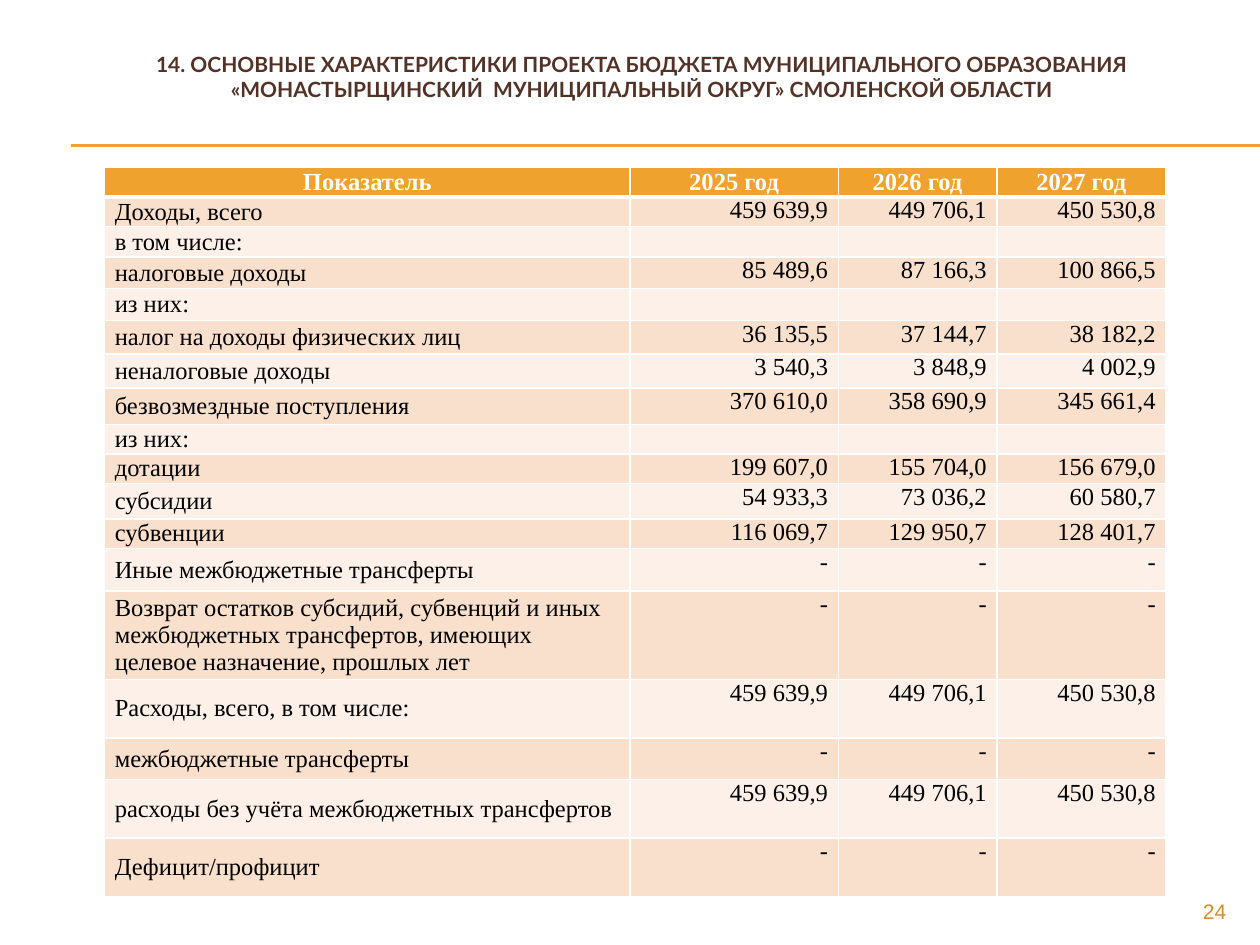
from lxml.etree import SubElement
from pptx import Presentation
from pptx.dml.color import RGBColor
from pptx.enum.shapes import MSO_CONNECTOR as Connector
from pptx.enum.text import MSO_ANCHOR as Anchor, PP_ALIGN as Align
from pptx.oxml.ns import qn
from pptx.util import Pt

COLORS = {
    "accent": "F0A22E",
    "title": "523227",
    "number": "D38E27",
    "band_dark": "F9E0CD",
    "band_light": "FCF0E8",
    "text": "000000",
    "white": "FFFFFF",
}

HEADER = ("Показатель", "2025 год", "2026 год", "2027 год")
NO_VALUES = ("", "", "")
DASHES = ("-", "-", "-")
TOTALS = ("459 639,9", "449 706,1", "450 530,8")

# Row height in points, indicator, values for the three years
BUDGET = [
    (16.7, "Доходы, всего", TOTALS),
    (17.4, "в том числе:", NO_VALUES),
    (18.1, "налоговые доходы", ("85 489,6", "87 166,3", "100 866,5")),
    (18.3, "из них:", NO_VALUES),
    (19, "налог на доходы физических лиц", ("36 135,5", "37 144,7", "38 182,2")),
    (19.5, "неналоговые доходы", ("3 540,3", "3 848,9", "4 002,9")),
    (20.8, "безвозмездные поступления", ("370 610,0", "358 690,9", "345 661,4")),
    (16.8, "из них:", NO_VALUES),
    (16.8, "дотации", ("199 607,0", "155 704,0", "156 679,0")),
    (20.4, "субсидии", ("54 933,3", "73 036,2", "60 580,7")),
    (16.8, "субвенции", ("116 069,7", "129 950,7", "128 401,7")),
    (24.4, "Иные межбюджетные трансферты", DASHES),
    (50.4, "Возврат остатков субсидий, субвенций и иных межбюджетных "
           "трансфертов, имеющих целевое назначение, прошлых лет", DASHES),
    (33.5, "Расходы, всего, в том числе:", TOTALS),
    (23.8, "межбюджетные трансферты", DASHES),
    (33.5, "расходы без учёта межбюджетных трансфертов", TOTALS),
    (33.5, "Дефицит/профицит", DASHES),
]


class BudgetSlide:
    table_font = "Times New Roman"
    table_size = 14
    cell_inset = 5.8

    def __init__(self, slide):
        self.slide = slide

    def color(self, name):
        return RGBColor.from_string(COLORS[name])

    def set_text(self, frame, text, font, size, color, bold, align):
        frame.text = text
        paragraph = frame.paragraphs[0]
        paragraph.alignment = align
        for run in paragraph.runs:
            run.font.name = font
            run.font.size = Pt(size)
            run.font.bold = bold
            run.font.color.rgb = self.color(color)

    def label(self, box, text, font, color, bold, align, anchor):
        frame = self.slide.shapes.add_textbox(*map(Pt, box)).text_frame
        frame.word_wrap = True
        frame.vertical_anchor = anchor
        self.set_text(frame, text, font, 12, color, bold, align)

    def rule(self, left, right, y):
        line = self.slide.shapes.add_connector(
            Connector.STRAIGHT, Pt(left), Pt(y), Pt(right), Pt(y))
        line.line.color.rgb = self.color("accent")
        line.line.width = Pt(0.75)
        SubElement(line._element.spPr, qn("a:effectLst"))

    def borders(self, cell, top, bottom):
        properties = cell._tc.get_or_add_tcPr()
        for side, width in (("L", 1), ("R", 1), ("T", top), ("B", bottom)):
            edge = SubElement(properties, qn(f"a:ln{side}"), w=str(Pt(width)))
            fill = SubElement(edge, qn("a:solidFill"))
            SubElement(fill, qn("a:srgbClr"), val=COLORS["white"])

    def cell(self, cell, text, fill, color, bold, align, anchor, top=1, bottom=1):
        self.borders(cell, top, bottom)
        cell.fill.solid()
        cell.fill.fore_color.rgb = self.color(fill)
        cell.margin_left = cell.margin_right = Pt(self.cell_inset)
        cell.margin_top = cell.margin_bottom = 0
        cell.vertical_anchor = anchor
        self.set_text(cell.text_frame, text, self.table_font, self.table_size,
                      color, bold, align)
        if not text:  # keeps an empty row from growing
            SubElement(cell.text_frame.paragraphs[0]._p, qn("a:endParaRPr"),
                       sz=str(self.table_size * 100))

    def table(self, left, top, widths, header_height, header, rows):
        heights = [header_height] + [height for height, _, _ in rows]
        table = self.slide.shapes.add_table(
            len(heights), len(widths), Pt(left), Pt(top),
            Pt(sum(widths)), Pt(sum(heights))).table
        for column, width in zip(table.columns, widths):
            column.width = Pt(width)
        for row, height in zip(table.rows, heights):
            row.height = Pt(height)
        for column, title in enumerate(header):
            self.cell(table.cell(0, column), title, "accent", "white", True,
                      Align.CENTER, Anchor.MIDDLE, bottom=3)
        for index, (_, indicator, values) in enumerate(rows, start=1):
            band = "band_dark" if index % 2 else "band_light"
            for column, text in enumerate((indicator, *values)):
                align, anchor = ((Align.RIGHT, Anchor.TOP) if column
                                 else (Align.LEFT, Anchor.MIDDLE))
                self.cell(table.cell(index, column), text, band, "text", False,
                          align, anchor, top=3 if index == 1 else 1)


def main():
    deck = Presentation()
    deck.slide_width, deck.slide_height = Pt(720), Pt(540)
    page = BudgetSlide(deck.slides.add_slide(deck.slide_layouts[6]))

    # Double rule under the title
    for y in (82.8, 83.5):
        page.rule(40.5, 720, y)

    # Title
    page.label((36, 25.2, 661.7, 36.7),
               "14. ОСНОВНЫЕ ХАРАКТЕРИСТИКИ ПРОЕКТА БЮДЖЕТА МУНИЦИПАЛЬНОГО "
               "ОБРАЗОВАНИЯ «МОНАСТЫРЩИНСКИЙ  МУНИЦИПАЛЬНЫЙ ОКРУГ» "
               "СМОЛЕНСКОЙ ОБЛАСТИ",
               "Lato", "title", True, Align.CENTER, Anchor.MIDDLE)

    # Budget table
    page.table(59.8, 95.8, (300.2, 119, 90.7, 96.5), 16.7, HEADER, BUDGET)

    # Page number
    page.label((648, 509.8, 59.8, 19.4), "24", "Arial", "number", False,
               Align.RIGHT, Anchor.TOP)

    deck.save("out.pptx")


if __name__ == "__main__":
    main()
